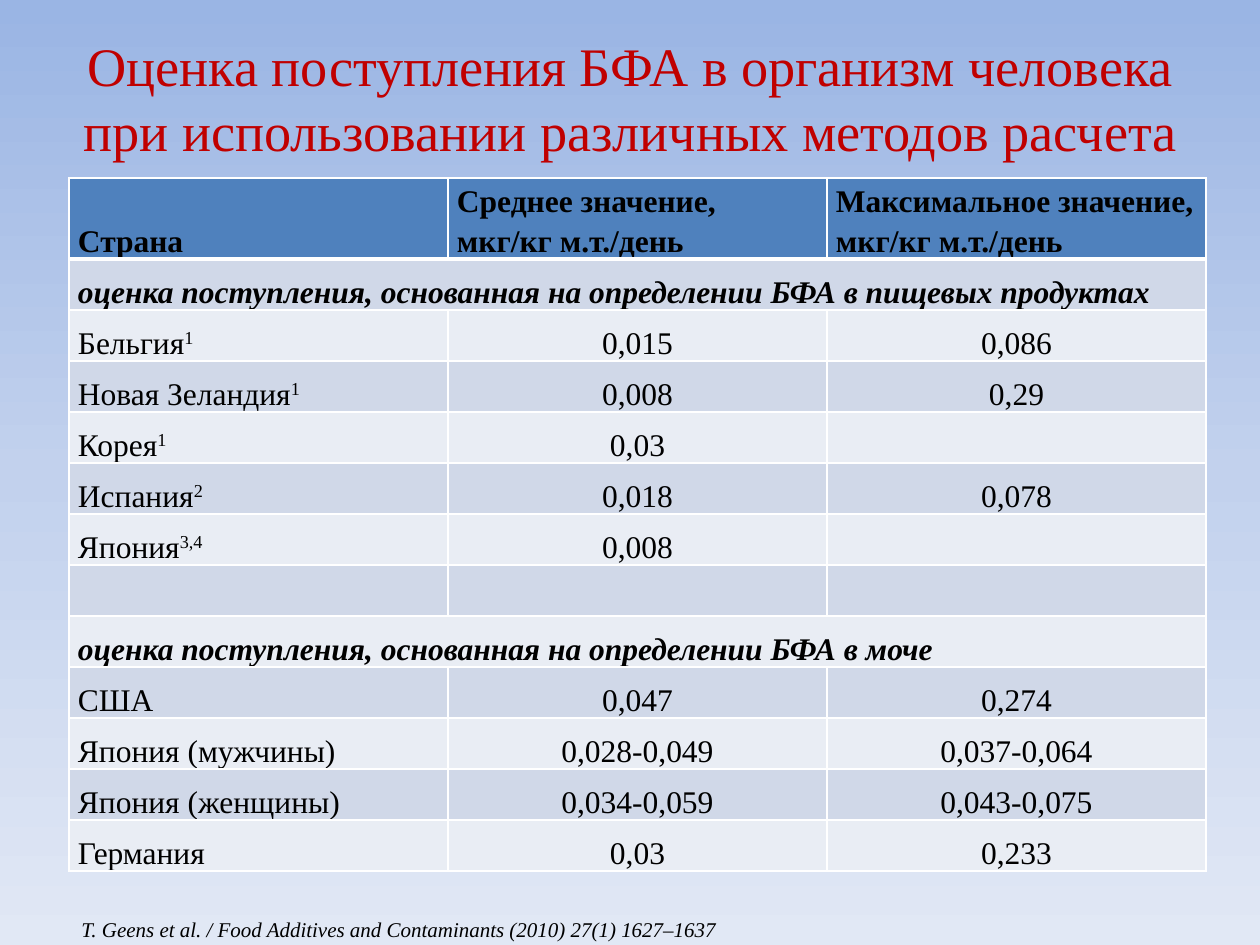
import dataclasses

import pptx
import pptx.dml.color
import pptx.enum.text
import pptx.oxml
import pptx.oxml.ns
import pptx.util
from copy import deepcopy

EMU_PER_PX = 914400 // 126
ALIGN = pptx.enum.text.PP_ALIGN
ANCHOR = pptx.enum.text.MSO_ANCHOR


@dataclasses.dataclass(frozen=True)
class Theme:
    font: str = "Times New Roman"
    title: str = "C00000"
    text: str = "000000"
    header: str = "4F81BD"
    bands: tuple = ("D0D8E8", "E9EDF4")
    border: str = "FFFFFF"
    background: tuple = ((0, "9AB5E4"), (0.5, "C2D1ED"), (1, "E1E8F5"))
    title_size: int = 31
    table_size: int = 18
    source_size: int = 12


def px(length):
    return pptx.util.Emu(length * EMU_PER_PX)


def rgb(value):
    return pptx.dml.color.RGBColor.from_string(value)


def apply(target, values):
    for name, value in values.items():
        setattr(target, name, value)


class SlideBuilder:
    def __init__(self, deck, theme):
        self.theme = theme
        self.slide = deck.slides.add_slide(deck.slide_layouts[5])

    def background(self):
        fill = self.slide.background.fill
        fill.gradient()
        fill.gradient_angle = 270
        stop_list = next(self.slide.element.iter(pptx.oxml.ns.qn("a:gsLst")))
        stop_list.append(deepcopy(stop_list[-1]))
        for stop, (position, color) in zip(fill.gradient_stops, self.theme.background):
            stop.position = position
            stop.color.rgb = rgb(color)

    def add_text(self, paragraph, text, size, color, superscript="", **style):
        for part, baseline in ((text, 0), (superscript, 30000)):
            if not part:
                continue
            run = paragraph.add_run()
            run.text = part
            apply(run.font, {"name": self.theme.font, "size": pptx.util.Pt(size), **style})
            run.font.color.rgb = rgb(color)
            if baseline:
                run.font._element.set("baseline", str(baseline))

    def title(self, text, left, top, width, height):
        heading = self.slide.shapes.title
        apply(heading, {"left": px(left), "top": px(top),
                        "width": px(width), "height": px(height)})
        apply(heading.text_frame, {"word_wrap": True, "vertical_anchor": ANCHOR.MIDDLE})
        paragraph = heading.text_frame.paragraphs[0]
        paragraph.alignment = ALIGN.CENTER
        self.add_text(paragraph, text, self.theme.title_size, self.theme.title)

    def source(self, text, left, top, width, height):
        citation = self.slide.shapes.add_textbox(px(left), px(top), px(width), px(height))
        citation.text_frame.word_wrap = False
        paragraph = citation.text_frame.paragraphs[0]
        paragraph.line_spacing = 1.5
        self.add_text(paragraph, text, self.theme.source_size, self.theme.text, italic=True)

    def borders(self, cell, bottom_width):
        """Put the four edge lines ahead of the fill, as the schema asks."""
        properties = cell._tc.get_or_add_tcPr()
        widths = {"lnL": 1, "lnR": 1, "lnT": 1, "lnB": bottom_width}
        for index, (edge, width) in enumerate(widths.items()):
            properties.insert(index, pptx.oxml.parse_xml(
                f'<a:{edge} {pptx.oxml.ns.nsdecls("a")} w="{pptx.util.Pt(width)}">'
                f'<a:solidFill><a:srgbClr val="{self.theme.border}"/></a:solidFill>'
                f'</a:{edge}>'))

    def cell(self, cell, text, fill, centered=False, bottom_width=1, **style):
        apply(cell, {"margin_left": px(9), "margin_right": px(9), "margin_top": 0,
                     "margin_bottom": 0, "vertical_anchor": ANCHOR.BOTTOM})
        cell.fill.solid()
        cell.fill.fore_color.rgb = rgb(fill)
        self.borders(cell, bottom_width)
        paragraph = cell.text_frame.paragraphs[0]
        apply(paragraph, {"line_spacing": 1.15,
                          "alignment": ALIGN.CENTER if centered else ALIGN.LEFT})
        name, _, notes = text.partition("^")
        self.add_text(paragraph, name, self.theme.table_size, self.theme.text, notes, **style)

    def table(self, header, rows, left, top, column_width, header_height, row_height):
        """Draw the table; a row with a single text spans all columns."""
        count = len(header)
        grid = self.slide.shapes.add_table(
            len(rows) + 1, count, px(left), px(top), px(column_width * count),
            px(header_height + row_height * len(rows))).table
        for column in grid.columns:
            column.width = px(column_width)
        for row in grid.rows:
            row.height = px(row_height)
        grid.rows[0].height = px(header_height)
        for column, text in enumerate(header):
            self.cell(grid.cell(0, column), text, self.theme.header,
                      bottom_width=3, bold=True)
        for index, texts in enumerate(rows, 1):
            is_section = len(texts) == 1
            fill = self.theme.bands[(index - 1) % 2]
            for column in range(count):
                text = texts[column] if column < len(texts) else ""
                self.cell(grid.cell(index, column), text, fill, centered=column > 0,
                          bold=is_section, italic=is_section)
            if is_section:
                grid.cell(index, 0).merge(grid.cell(index, count - 1))


HEADER = ("Страна", "Среднее значение, мкг/кг м.т./день",
          "Максимальное значение, мкг/кг м.т./день")
# Text after ^ is a superscript reference.
INTAKE = (
    ("оценка поступления, основанная на определении БФА в пищевых продуктах",),
    ("Бельгия^1", "0,015", "0,086"),
    ("Новая Зеландия^1", "0,008", "0,29"),
    ("Корея^1", "0,03", ""),
    ("Испания^2", "0,018", "0,078"),
    ("Япония^3,4", "0,008", ""),
    ("", "", ""),
    ("оценка поступления, основанная на определении БФА в моче",),
    ("США", "0,047", "0,274"),
    ("Япония (мужчины)", "0,028-0,049", "0,037-0,064"),
    ("Япония (женщины)", "0,034-0,059", "0,043-0,075"),
    ("Германия", "0,03", "0,233"),
)


def main():
    deck = pptx.Presentation()
    apply(deck, {"slide_width": px(1260), "slide_height": px(945)})
    builder = SlideBuilder(deck, Theme())
    builder.background()
    builder.title("Оценка поступления БФА в организм человека "
                  "при использовании различных методов расчета", 63, 0, 1134, 195)
    builder.table(HEADER, INTAKE, left=69, top=178, column_width=379,
                  header_height=81, row_height=51)
    builder.source("T. Geens et al. / Food Additives and Contaminants (2010) "
                   "27(1) 1627–1637", 69, 898, 670, 47)
    deck.save("out.pptx")


if __name__ == "__main__":
    main()
